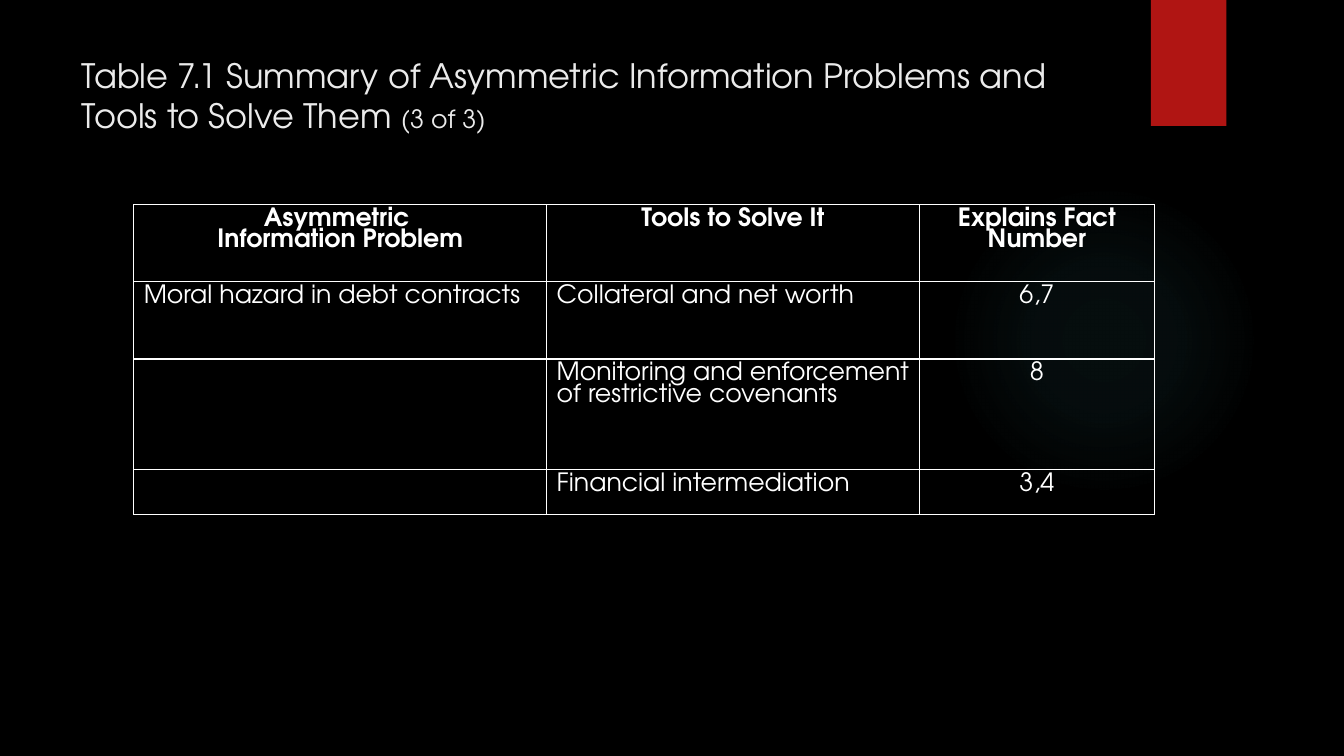
from lxml import etree
from pptx import Presentation
from pptx.dml.color import RGBColor
from pptx.enum.shapes import MSO_SHAPE as Preset
from pptx.enum.text import MSO_ANCHOR as Anchor, MSO_AUTO_SIZE as AutoSize, PP_ALIGN as Align
from pptx.oxml import parse_xml
from pptx.oxml.ns import nsdecls, qn
from pptx.util import Pt

BLACK = RGBColor(0x00, 0x00, 0x00)
WHITE = RGBColor(0xFF, 0xFF, 0xFF)
TITLE_GREY = RGBColor(0xEB, 0xEB, 0xEB)
RED = RGBColor(0xB0, 0x15, 0x13)
TEAL = RGBColor(0x50, 0xB9, 0xC1)
FONT = "TeX Gyre Adventor"

TITLE_RUNS = [
    ("Table 7.1 Summary of Asymmetric Information Problems and Tools to Solve Them ", 24),
    ("(3 of 3)", 18),
]
COLUMN_WIDTHS = [295, 266.2, 168]
ROW_HEIGHTS = [55.1, 55.1, 79.2, 31.7]
ROWS = [
    ["Asymmetric \vInformation Problem", "Tools to Solve It", "Explains Fact Number"],
    ["Moral hazard in debt contracts", "Collateral and net worth", "6,7"],
    ["", "Monitoring and enforcement of restrictive covenants", "8"],
    ["", "Financial intermediation", "3,4"],
]


def write_text(text_frame, runs, color, bold=False, align=Align.LEFT, spacing=1.0):
    """Fill the first paragraph with (text, size) runs; \\v marks a line break."""
    paragraph = text_frame.paragraphs[0]
    paragraph.alignment = align
    paragraph.line_spacing = spacing
    for text, size in runs:
        for index, line in enumerate(text.split("\v")):
            if index:
                paragraph.add_line_break()
            run = paragraph.add_run()
            run.text = line
            run.font.name = FONT
            run.font.size = Pt(size)
            run.font.bold = bold
            run.font.color.rgb = color


def add_plain_shape(slide, preset, box, color):
    shape = slide.shapes.add_shape(preset, *map(Pt, box))
    shape.shadow.inherit = False
    shape.fill.solid()
    shape.fill.fore_color.rgb = color
    shape.line.fill.background()
    return shape


def add_glow(slide, box):
    """Faint circle that fades out from its centre."""
    glow = add_plain_shape(slide, Preset.OVAL, box, TEAL)
    stops = "".join(
        f'<a:gs pos="{position * 1000}"><a:srgbClr val="{TEAL}">'
        f'<a:alpha val="{alpha * 1000}"/></a:srgbClr></a:gs>'
        for position, alpha in [(0, 7), (36, 6), (69, 0), (100, 0)]
    )
    gradient = parse_xml(
        f'<a:gradFill {nsdecls("a")}><a:gsLst>{stops}</a:gsLst><a:path path="circle">'
        '<a:fillToRect l="50000" t="50000" r="50000" b="50000"/></a:path></a:gradFill>'
    )
    properties = glow.element.spPr
    properties.replace(properties.find(qn("a:solidFill")), gradient)


def place_title(slide, box):
    title = slide.shapes.title
    title.left, title.top, title.width, title.height = map(Pt, box)
    text_frame = title.text_frame
    text_frame.word_wrap = True
    text_frame.auto_size = AutoSize.NONE
    text_frame.vertical_anchor = Anchor.TOP
    write_text(text_frame, TITLE_RUNS, TITLE_GREY)


def set_borders(cell, color, width):
    properties = cell._tc.get_or_add_tcPr()
    for index, side in enumerate(["lnL", "lnR", "lnT", "lnB"]):
        border = etree.Element(qn(f"a:{side}"), w=str(Pt(width)))
        fill = etree.SubElement(border, qn("a:solidFill"))
        etree.SubElement(fill, qn("a:srgbClr"), val=str(color))
        properties.insert(index, border)


def add_summary_table(slide, left, top):
    frame = slide.shapes.add_table(
        len(ROWS), len(COLUMN_WIDTHS), Pt(left), Pt(top),
        Pt(sum(COLUMN_WIDTHS)), Pt(sum(ROW_HEIGHTS)),
    )
    table = frame.table
    table.first_row = table.horz_banding = False
    for column, width in zip(table.columns, COLUMN_WIDTHS):
        column.width = Pt(width)
    for row, height in zip(table.rows, ROW_HEIGHTS):
        row.height = Pt(height)
    for row_index, texts in enumerate(ROWS):
        for column_index, text in enumerate(texts):
            cell = table.cell(row_index, column_index)
            cell.fill.background()
            set_borders(cell, WHITE, 1)
            is_header = row_index == 0
            centred = is_header or column_index == 2
            if text:
                write_text(cell.text_frame, [(text, 18)], WHITE, bold=is_header,
                           align=Align.CENTER if centred else Align.LEFT, spacing=0.9)


def build_slide(presentation):
    slide = presentation.slides.add_slide(presentation.slide_layouts[5])
    slide.background.fill.solid()
    slide.background.fill.fore_color.rgb = BLACK
    add_glow(slide, (677.5, 131.8, 221.8, 221.8))
    add_plain_shape(slide, Preset.RECTANGLE, (822, 0, 54, 90), RED)
    place_title(slide, (51, 35.4, 741, 110))
    add_summary_table(slide, 95.5, 146.2)


def main():
    presentation = Presentation()
    presentation.slide_width, presentation.slide_height = Pt(960), Pt(540)
    build_slide(presentation)
    presentation.save("out.pptx")


if __name__ == "__main__":
    main()
